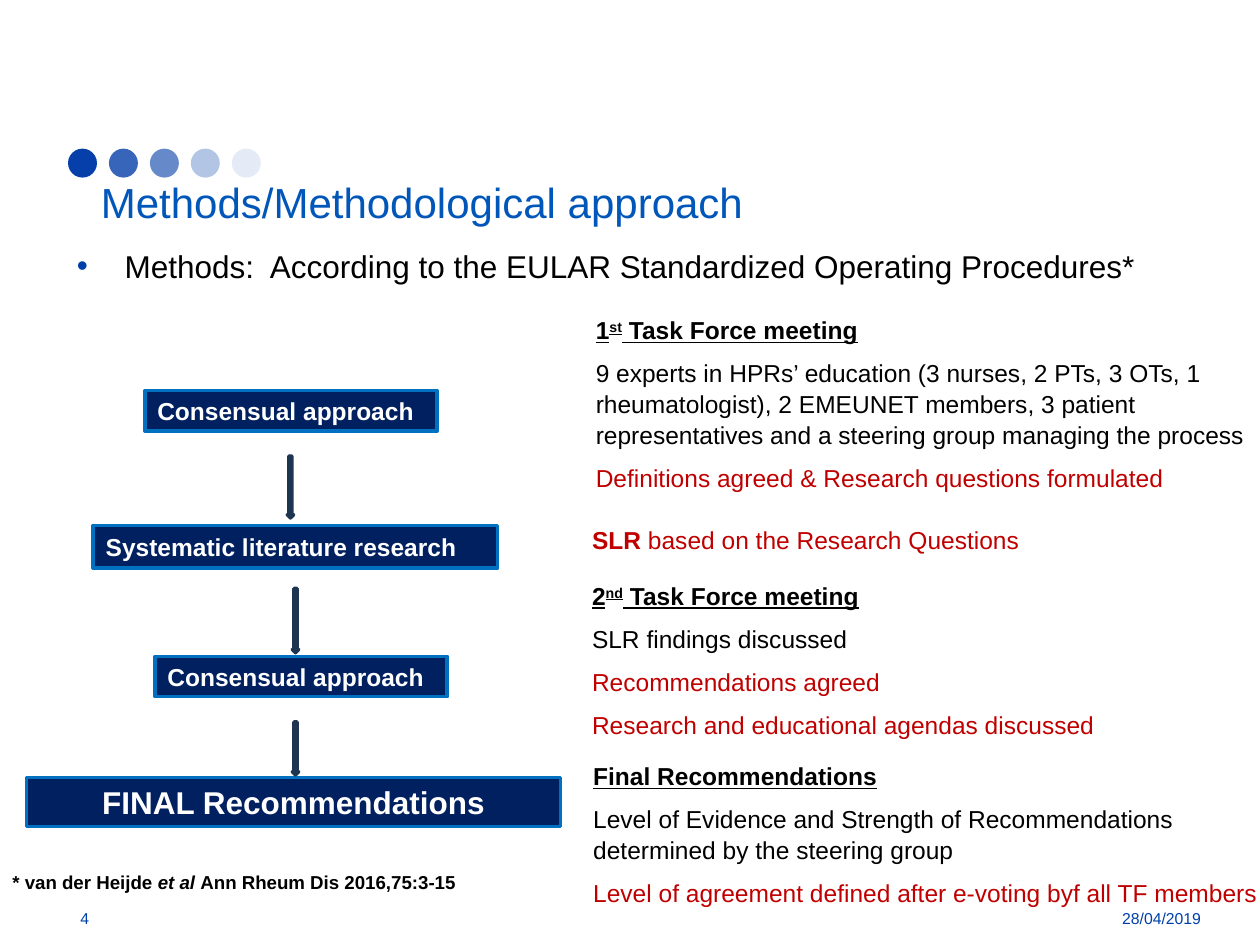
from collections import namedtuple

from lxml import etree
from pptx import Presentation
from pptx.dml.color import RGBColor
from pptx.enum.shapes import MSO_SHAPE
from pptx.enum.text import MSO_ANCHOR, MSO_AUTO_SIZE, PP_ALIGN
from pptx.oxml.ns import qn
from pptx.util import Inches, Pt

COLORS = {
    "dot": "063FA9", "title": "0056B9", "accent": "003FA8", "text": "000000",
    "result": "C00000", "step": "002060", "step_line": "0070C0",
    "arrow": "28476D", "arrow_line": "1E3551", "light": "FFFFFF",
}
FONT = "Arial"
CELL = Inches(0.1)  # the slide is a grid of 100 columns by 75 rows

Box = namedtuple("Box", "column row columns rows")


def color(name):
    return RGBColor.from_string(COLORS[name])


def lengths(box):
    return [round(cells * CELL) for cells in box]


def inside(outer, column, row, columns, rows):
    """Box whose place is counted from the corner of the outer box."""
    return Box(outer.column + column, outer.row + row, columns, rows)


def style(paragraph, size, color_name, bold=False):
    font = paragraph.font
    font.name, font.size, font.bold = FONT, Pt(size), bold
    font.color.rgb = color(color_name)


def add_shape(slide, kind, box, fill, line=None):
    shape = slide.shapes.add_shape(kind, *lengths(box))
    shape.shadow.inherit = False
    shape.fill.solid()
    shape.fill.fore_color.rgb = color(fill)
    if line:
        shape.line.color.rgb = color(line)
        shape.line.width = Pt(2)
    else:
        shape.line.fill.background()
    return shape


def add_text_frame(slide, box, wrap=True):
    frame = slide.shapes.add_textbox(*lengths(box)).text_frame
    frame.word_wrap = wrap
    return frame


def add_dots(slide, box):
    step = (box.columns - box.rows) / 4
    for index, opacity in enumerate((100, 80, 61, 30, 10)):
        dot_box = inside(box, index * step, 0, box.rows, box.rows)
        dot = add_shape(slide, MSO_SHAPE.OVAL, dot_box, "dot")
        fill_color = dot.fill._xPr.find(qn("a:solidFill"))[0]
        etree.SubElement(fill_color, qn("a:alpha")).set("val", str(opacity * 1000))


def fill_placeholder(placeholder, box, text, size, color_name):
    placeholder.left, placeholder.top, placeholder.width, placeholder.height = lengths(box)
    frame = placeholder.text_frame
    frame.text = text
    frame.auto_size = MSO_AUTO_SIZE.NONE
    frame.vertical_anchor = MSO_ANCHOR.TOP
    paragraph = frame.paragraphs[0]
    paragraph.alignment = PP_ALIGN.LEFT
    paragraph.space_before = Pt(0)
    style(paragraph, size, color_name)
    return paragraph


def add_bullet(paragraph):
    properties = paragraph._p.get_or_add_pPr()
    indent = Inches(0.38)
    properties.set("marL", str(indent))
    properties.set("indent", str(-indent))
    bullet_color = etree.SubElement(properties, qn("a:buClr"))
    etree.SubElement(bullet_color, qn("a:srgbClr")).set("val", COLORS["accent"])
    etree.SubElement(properties, qn("a:buFont")).set("typeface", FONT)
    etree.SubElement(properties, qn("a:buChar")).set("char", "•")


def add_step(slide, box, text, size, alignment):
    step = add_shape(slide, MSO_SHAPE.RECTANGLE, box, "step", "step_line")
    frame = step.text_frame
    frame.text = text
    frame.word_wrap = True
    frame.vertical_anchor = MSO_ANCHOR.MIDDLE
    frame.paragraphs[0].alignment = alignment
    style(frame.paragraphs[0], size, "light", bold=True)


def add_flow(slide, box):
    left, center = PP_ALIGN.LEFT, PP_ALIGN.CENTER
    steps = [
        ((9.4, 0, 23.2, 3.2), "Consensual approach", 14, left),
        ((5.3, 10.7, 32.1, 3.4), "Systematic literature research", 14, left),
        ((10.2, 21.1, 23.2, 3.2), "Consensual approach", 14, left),
        ((0, 30.7, box.columns, 3.9), "FINAL Recommendations", 18, center),
    ]
    for place, text, size, alignment in steps:
        add_step(slide, inside(box, *place), text, size, alignment)
    for column, row, rows in ((20.7, 5.2, 4.9), (21.1, 15.7, 5.1), (21.1, 26.3, 4.2)):
        add_shape(slide, MSO_SHAPE.DOWN_ARROW, inside(box, column, row, 0.5, rows),
                  "arrow", "arrow_line")


def add_heading(paragraph, number, ordinal, title):
    style(paragraph, 14, "text", bold=True)
    paragraph.font.underline = True
    for text in filter(None, (number, ordinal, title)):
        run = paragraph.add_run()
        run.text = text
        run.font.underline = True
        if text == ordinal:
            run._r.get_or_add_rPr().set("baseline", "30000")


def add_stage(slide, box, heading, lines):
    """Underlined heading over lines given as (text, color name)."""
    frame = add_text_frame(slide, box)
    add_heading(frame.paragraphs[0], *heading)
    for text, color_name in lines:
        paragraph = frame.add_paragraph()
        paragraph.text = text
        paragraph.space_before = Pt(7)
        style(paragraph, 14, color_name)
    for paragraph in frame.paragraphs:
        paragraph.line_spacing = 1.05


def add_review(slide, box):
    paragraph = add_text_frame(slide, box).paragraphs[0]
    paragraph.line_spacing = 1.05
    style(paragraph, 14, "result")
    for text, bold in (("SLR", True), (" based on the Research Questions", False)):
        run = paragraph.add_run()
        run.text, run.font.bold = text, bold


def add_stages(slide, box):
    add_stage(slide, inside(box, 0.3, 0, 53.9, 15.1), ("1", "st", " Task Force meeting"), [
        ("9 experts in HPRs’ education (3 nurses, 2 PTs, 3 OTs, 1 rheumatologist), "
         "2 EMEUNET members, 3 patient representatives and a steering group "
         "managing the process", "text"),
        ("Definitions agreed & Research questions formulated", "result"),
    ])
    add_review(slide, inside(box, 0, 16.7, 46.2, 3.4))
    add_stage(slide, inside(box, 0, 21.1, 53.9, 14), ("2", "nd", " Task Force meeting"), [
        ("SLR findings discussed", "text"),
        ("Recommendations agreed", "result"),
        ("Research and educational agendas discussed", "result"),
    ])
    add_stage(slide, inside(box, 0.1, 35.4, 55.3, 12.8), ("", "", "Final Recommendations"), [
        ("Level of Evidence and Strength of Recommendations determined by the "
         "steering group", "text"),
        ("Level of agreement defined after e-voting byf all TF members", "result"),
    ])


def add_citation(slide, box):
    paragraph = add_text_frame(slide, box, wrap=False).paragraphs[0]
    style(paragraph, 10.7, "text", bold=True)
    for text, italic in (("* van der Heijde ", False), ("et al ", True),
                         ("Ann Rheum Dis 2016,75:3-15", False)):
        run = paragraph.add_run()
        run.text, run.font.italic = text, italic


def add_footer(slide, box):
    for column, columns, text, alignment in (
            (0, 9.6, "4", PP_ALIGN.LEFT),
            (box.columns - 13.4, 13.4, "28/04/2019", PP_ALIGN.RIGHT)):
        frame = add_text_frame(slide, inside(box, column, 0, columns, box.rows))
        frame.text = text
        frame.vertical_anchor = MSO_ANCHOR.MIDDLE
        frame.paragraphs[0].alignment = alignment
        style(frame.paragraphs[0], 9, "accent")


def main():
    presentation = Presentation()
    presentation.slide_width, presentation.slide_height = 100 * CELL, 75 * CELL
    slide = presentation.slides.add_slide(presentation.slide_layouts[1])
    add_dots(slide, Box(5.4, 11.8, 15.3, 2.3))
    fill_placeholder(slide.shapes.title, Box(7, 13.5, 91.1, 6.9),
                     "Methods/Methodological approach", 24, "title")
    methods = fill_placeholder(
        slide.placeholders[1], Box(5.1, 19.1, 91.1, 48.9),
        "Methods:  According to the EULAR Standardized Operating Procedures*", 18, "text")
    add_bullet(methods)
    add_flow(slide, Box(2.1, 31, 42.4, 34.6))
    add_stages(slide, Box(46, 24.4, 54, 48.2))
    add_citation(slide, Box(0, 68.6, 37.6, 2.8))
    add_footer(slide, Box(5.4, 70.9, 90.9, 4))
    presentation.save("out.pptx")


if __name__ == "__main__":
    main()
